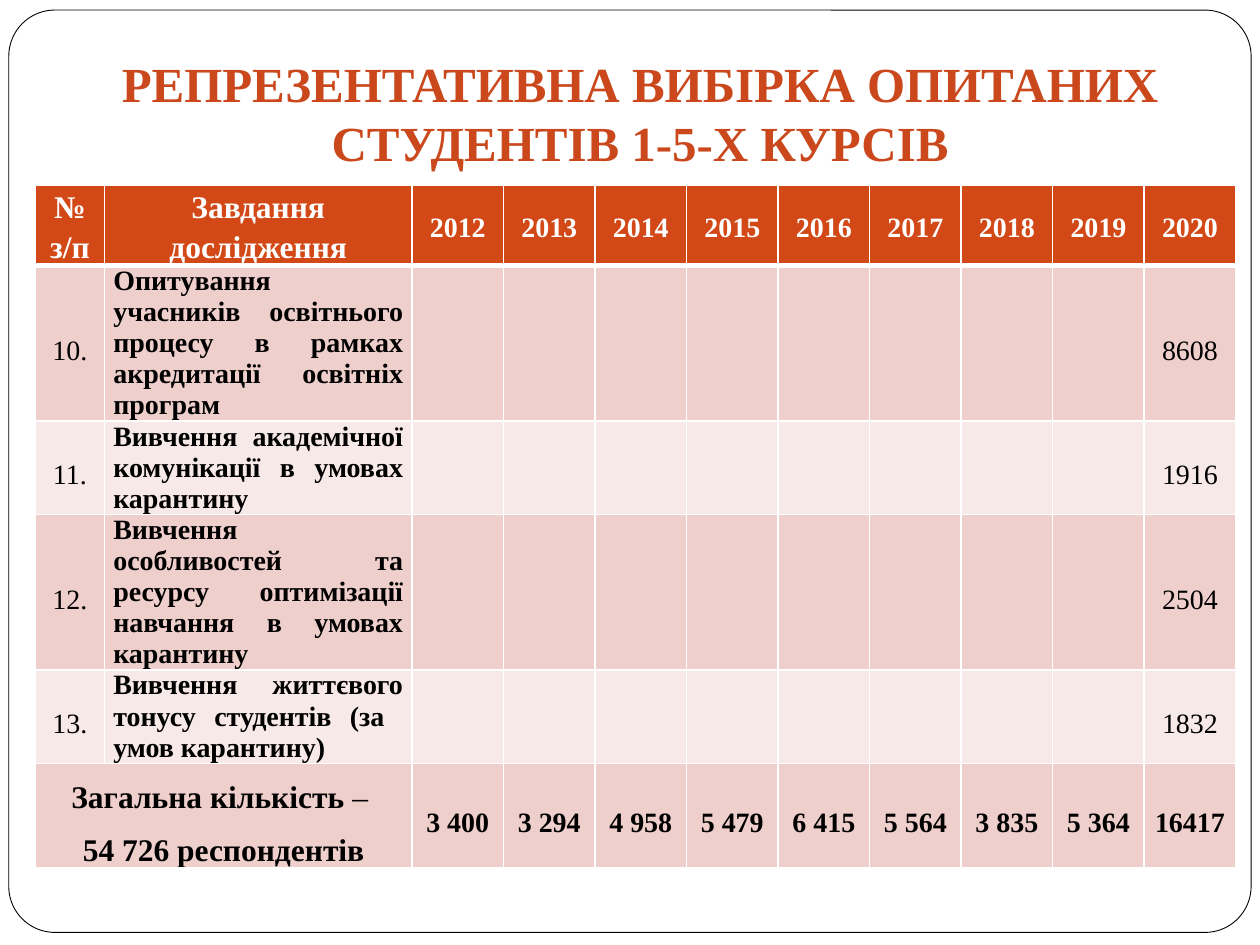
import pptx
import pptx.util
import pptx.dml.color
import pptx.enum.shapes
import pptx.enum.text
import pptx.oxml
import pptx.oxml.ns

Inches = pptx.util.Inches
Pt = pptx.util.Pt
ALIGN = pptx.enum.text.PP_ALIGN
ANCHOR = pptx.enum.text.MSO_ANCHOR

FONT = "Times New Roman"
HUES = {"head": "D34817", "dark": "EFCFCC", "light": "F7E9E8",
        "title": "CA481C", "white": "FFFFFF", "black": "000000"}
YEARS = [str(year) for year in range(2012, 2021)]
TASKS = [
    ("10.", "Опитування учасників освітнього процесу в рамках акредитації освітніх програм", "8608"),
    ("11.", "Вивчення академічної комунікації в умовах карантину", "1916"),
    ("12.", "Вивчення особливостей та ресурсу оптимізації навчання в умовах карантину", "2504"),
    ("13.", "Вивчення життєвого тонусу студентів (за  умов карантину)", "1832"),
]
SUMS = ["3 400", "3 294", "4 958", "5 479", "6 415", "5 564", "3 835", "5 364", "16417"]


def tint(name):
    """Return the named colour."""
    return pptx.dml.color.RGBColor.from_string(HUES[name])


def style(para, size, hue="black", bold=True, align=ALIGN.CENTER, space=None):
    """Format one paragraph."""
    para.alignment, para.line_spacing = align, space
    font = para.font
    font.name, font.size, font.bold = FONT, Pt(size), bold
    font.color.rgb = tint(hue)


def paint(cell, hue, base=1):
    """Give a cell its fill and white borders."""
    props = cell._tc.get_or_add_tcPr()
    for place, side in enumerate("LRTB"):
        width = Pt(base if side == "B" else 1)
        props.insert(place, pptx.oxml.parse_xml(
            f'<a:ln{side} {pptx.oxml.ns.nsdecls("a")} w="{width}"><a:solidFill>'
            f'<a:srgbClr val="{HUES["white"]}"/></a:solidFill></a:ln{side}>'))
    cell.fill.solid()
    cell.fill.fore_color.rgb = tint(hue)


def write(cell, text, size=16, anchor=ANCHOR.MIDDLE, **look):
    """Put formatted text in a cell."""
    cell.margin_left = cell.margin_right = Inches(0.07)
    cell.margin_top = cell.margin_bottom = 0
    cell.vertical_anchor = anchor
    cell.text = text
    for para in cell.text_frame.paragraphs:
        style(para, size, **look)


def add_frame(slide, left, top, width, height):
    """Draw the rounded slide border."""
    frame = slide.shapes.add_shape(
        pptx.enum.shapes.MSO_SHAPE.ROUNDED_RECTANGLE, left, top, width, height)
    frame.adjustments[0] = 0.05
    frame.shadow.inherit = False
    frame.fill.solid()
    frame.fill.fore_color.rgb = tint("white")
    frame.line.color.rgb = tint("black")
    frame.line.width = Pt(0.5)


def add_title(slide, left, top, width, height):
    """Fill the title and bring it to the front."""
    title = slide.shapes.title
    title.left, title.top, title.width, title.height = left, top, width, height
    body = title.text_frame
    body.text = "РЕПРЕЗЕНТАТИВНА ВИБІРКА ОПИТАНИХ СТУДЕНТІВ 1-5-Х КУРСІВ"
    body.word_wrap = True
    body.auto_size = pptx.enum.text.MSO_AUTO_SIZE.NONE
    body.vertical_anchor = ANCHOR.BOTTOM
    body.margin_bottom = Inches(0.1)
    style(body.paragraphs[0], 28, "title")
    title.element.getparent().append(title.element)


def add_survey(slide, left, top, width, height):
    """Build the table of tasks, years and totals."""
    count = len(TASKS) + 2
    shape = slide.shapes.add_table(count, len(YEARS) + 2, left, top, width, height)
    table = shape.table
    first, second = Inches(0.55), Inches(2.44)
    year = (width - first - second) // len(YEARS)
    for column, size in zip(table.columns, [first, second] + [year] * len(YEARS)):
        column.width = size
    for row in table.rows:
        row.height = Inches(0.56)
    shape.height = height

    for index, row in enumerate(table.rows):
        hue = "head" if index == 0 else "dark" if index % 2 else "light"
        for cell in row.cells:
            paint(cell, hue, 1 if index else 3)

    for index, text in enumerate(["№ з/п", "Завдання дослідження"] + YEARS):
        write(table.cell(0, index), text, 18 if index < 2 else 16, hue="white", space=1.15)
    last = len(YEARS) + 1
    for index, (number, task, total) in enumerate(TASKS, 1):
        write(table.cell(index, 0), number, bold=False, space=1.5)
        write(table.cell(index, 1), task, anchor=ANCHOR.TOP, align=ALIGN.JUSTIFY)
        write(table.cell(index, last), total, bold=False, space=1.5)

    whole = table.cell(count - 1, 0)
    whole.merge(table.cell(count - 1, 1))
    write(whole, "Загальна кількість\n54 726 респондентів", 18, space=1.5)
    dash = whole.text_frame.paragraphs[0].add_run()
    dash.text, dash.font.bold = " – ", False
    for index, total in enumerate(SUMS, 2):
        write(table.cell(count - 1, index), total, space=1.5)


def main():
    """Build and save the slide."""
    deck = pptx.Presentation()
    deck.slide_width, deck.slide_height = Inches(10), Inches(7.5)
    slide = deck.slides.add_slide(deck.slide_layouts[5])
    add_frame(slide, Inches(0.07), Inches(0.08), Inches(9.86), Inches(7.32))
    add_survey(slide, Inches(0.28), Inches(1.47), Inches(9.53), Inches(5.86))
    add_title(slide, Inches(0.83), Inches(0.21), Inches(8.5), Inches(1.25))
    deck.save("out.pptx")


if __name__ == "__main__":
    main()
